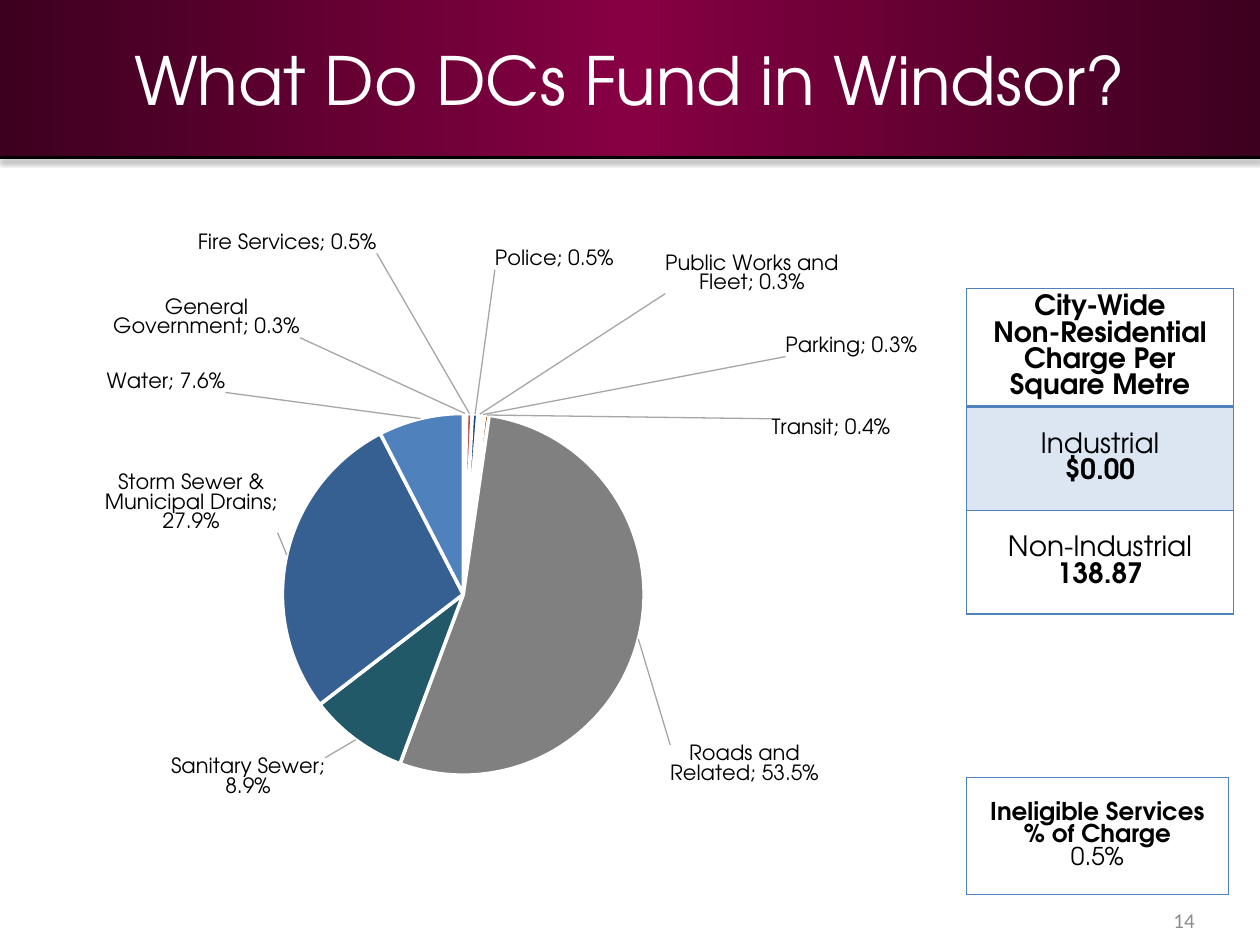
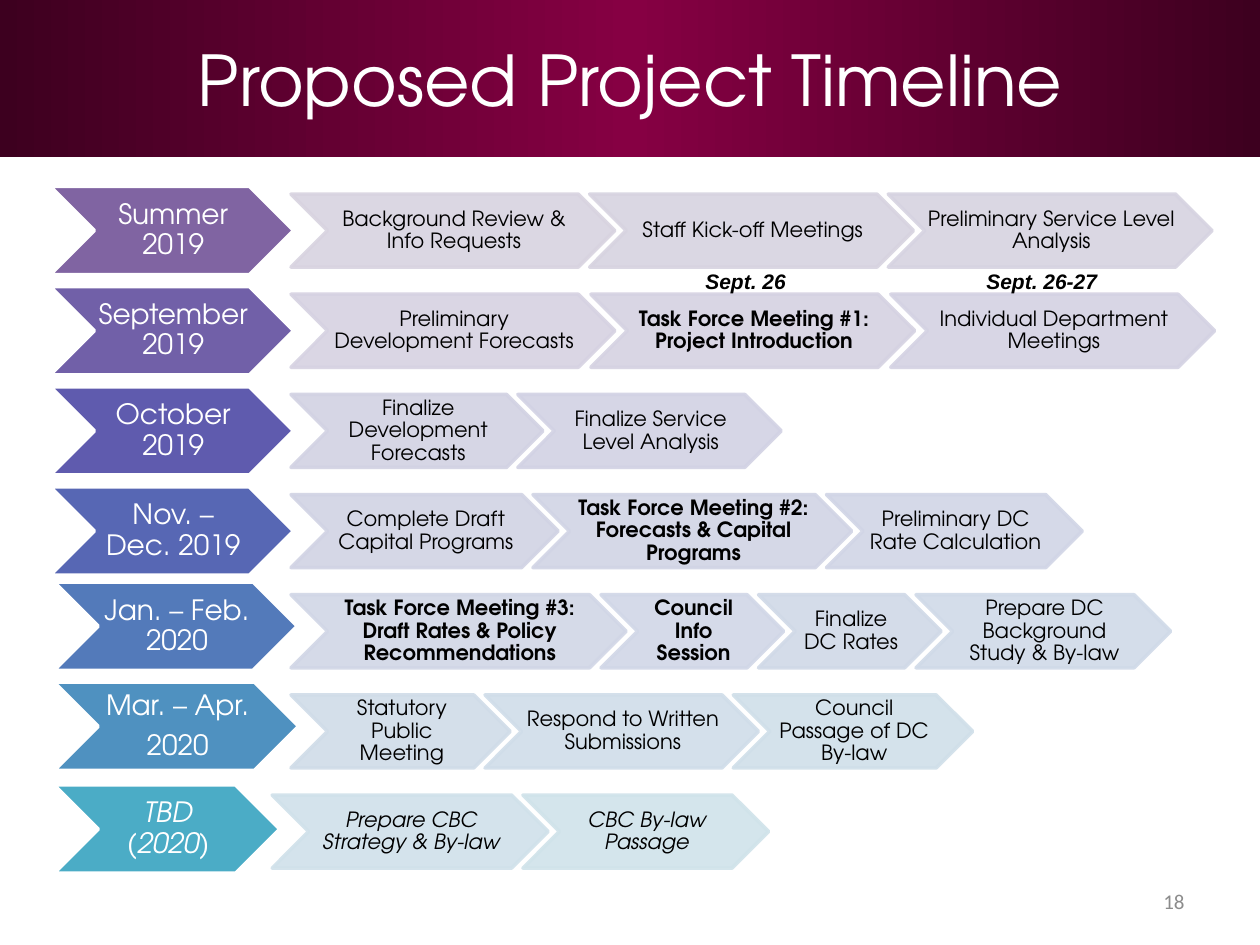
import math

import lxml.etree
import pptx
import pptx.chart.data
import pptx.dml.color
import pptx.enum.chart
import pptx.enum.shapes
import pptx.enum.text
import pptx.oxml
import pptx.oxml.ns
import pptx.util

Inches, Pt = pptx.util.Inches, pptx.util.Pt
qn = pptx.oxml.ns.qn
SHAPE = pptx.enum.shapes.MSO_SHAPE
ALIGN = pptx.enum.text.PP_ALIGN
MIDDLE = pptx.enum.text.MSO_ANCHOR.MIDDLE

# Shared style
FONT = "TeX Gyre Adventor"
BAND_H = 1.25
BAND_EDGE, BAND_MID = "3D001F", "860043"
BLUE, PALE_BLUE, GREY = "4F81BD", "DCE6F2", "8C8C8C"
WHITE, BLACK = "FFFFFF", "000000"
NS = pptx.oxml.ns.nsdecls("a", "c")

# Fund shares: name, share, colour, label centre x, y, label width, height
FUNDS = [
    ("General Government", 0.003, "4BACC6", 1.64, 2.52, 1.48, 0.32),
    ("Fire Services", 0.005, "C0504D", 2.28, 1.93, 1.43, 0.16),
    ("Police", 0.005, "1F497D", 4.4, 2.06, 0.94, 0.16),
    ("Public Works and Fleet", 0.003, "F79646", 5.97, 2.17, 1.38, 0.32),
    ("Parking", 0.003, "772C2A", 6.76, 2.75, 1.05, 0.16),
    ("Transit", 0.004, "984807", 6.6, 3.4, 0.95, 0.16),
    ("Roads and Related", 0.535, "808080", 5.91, 6.08, 1.18, 0.32),
    ("Sanitary Sewer", 0.089, "215968", 1.96, 6.17, 1.22, 0.32),
    ("Storm Sewer & Municipal Drains", 0.279, "376092", 1.52, 3.98, 1.37, 0.47),
    ("Water", 0.076, "4F81BD", 1.33, 3.03, 0.95, 0.16),
]
CHART_BOX = (0.02, 1.43, 7.65, 4.9)
PLOT = (0.178, 0.378, 0.6, 0.586)

# Table rows: height, fill, [(text, bold)]
CHARGES = [
    (0.92, WHITE, [("City-Wide", True), ("Non-Residential Charge Per", True),
                   ("Square Metre", True)]),
    (0.83, PALE_BLUE, [("Industrial", False), ("$0.00", True)]),
    (0.82, WHITE, [("Non-Industrial", False), ("138.87", True)]),
]
INELIGIBLE = [
    (0.93, WHITE, [("Ineligible Services % of Charge", True), ("0.5%", False)]),
]

# Timeline rows: period (lines, left, width, rise above steps, colour),
# steps (left, overlap), [(text, width, colour, bold)]
TIMELINE = [
    ((["Summer 2019"], 0.4, 1.93, 0.06, "8064A2"), (2.31, 0.2), [
        ("Background Review & Info Requests", 2.57, "D8D3E0", False),
        ("Staff Kick-off Meetings", 2.57, "D7D3E0", False),
        ("Preliminary Service Level Analysis", 2.57, "D6D3E1", False)]),
    ((["September 2019"], 0.4, 1.93, 0.06, "7160A8"), (2.31, 0.19), [
        ("Preliminary Development Forecasts", 2.57, "D6D2E2", False),
        ("Task Force Meeting #1: Project Introduction", 2.57, "D5D2E2", True),
        ("Individual Department Meetings", 2.57, "D4D2E3", False)]),
    ((["October 2019"], 0.4, 1.93, 0.06, "5F5BAE"), (2.31, 0.2), [
        ("Finalize Development Forecasts", 2, "D2D2E3", False),
        ("Finalize Service Level Analysis", 2.09, "D2D2E4", False)]),
    ((["Nov. – Dec. 2019"], 0.4, 1.93, 0.06, "5767B4"), (2.31, 0.2), [
        ("Complete Draft Capital Programs", 2.12, "D1D3E4", False),
        ("Task Force Meeting #2: Forecasts & Capital Programs", 2.53, "D1D4E5", True),
        ("Preliminary DC Rate Calculation", 2.03, "D1D5E6", False)]),
    ((["Jan. – Feb. 2020"], 0.43, 1.93, 0.1, "537ABA"), (2.31, 0.2), [
        ("Task Force Meeting #3: Draft Rates & Policy Recommendations",
         2.66, "D1D6E6", True),
        ("Council Info Session", 1.45, "D1D7E7", True),
        ("Finalize DC Rates", 1.45, "D0D9E7", False),
        ("Prepare DC Background Study & By-law", 2.02, "D0DAE8", False)]),
    ((["Mar. – Apr.", "2020"], 0.43, 1.94, 0.1, "4F91C0"), (2.31, 0.2), [
        ("Statutory Public Meeting", 1.74, "D0DCE8", False),
        ("Respond to Written Submissions", 2.17, "D0DDE9", False),
        ("Council Passage of DC By-law", 1.9, "D0DFE9", False)]),
    ((["TBD (2020)"], 0.43, 1.79, 0.08, "4BACC6"), (2.16, 0.2), [
        ("Prepare CBC Strategy & By-law", 2.19, "D0E1EA", False),
        ("CBC By-law Passage", 1.95, "D0E3EA", False)]),
]
FIRST_STEP_TOP, LAST_STEP_TOP = 1.54, 6.31
PERIOD_H, STEP_H = 0.7, 0.58
DATES = [("Sept. 26", 5.5), ("Sept. 26-27", 7.73)]


def rgb(value):
    return pptx.dml.color.RGBColor.from_string(value)


def box(*lengths):
    return [Inches(v) for v in lengths]


def style(p, size, color, name=FONT, bold=False, italic=False, align=ALIGN.CENTER):
    p.alignment = align
    f = p.font
    f.size, f.name, f.bold, f.italic = Pt(size), name, bold, italic
    f.color.rgb = rgb(color)


def add_text(slide, text, bounds, size, color, **kw):
    tf = slide.shapes.add_textbox(*box(*bounds)).text_frame
    tf.word_wrap = True
    p = tf.paragraphs[0]
    p.text = text
    style(p, size, color, **kw)
    return tf


def add_band(layout, slide):
    """Draw the title band and keep it on the layout."""
    sp = slide.shapes.add_shape(SHAPE.RECTANGLE, *box(0, 0, 10, BAND_H))
    sp.shadow.inherit = False
    stops = "".join(f'<a:gs pos="{pos}"><a:srgbClr val="{c}"/></a:gs>' for pos, c in
                    ((0, BAND_EDGE), (50000, BAND_MID), (100000, BAND_EDGE)))
    sp._element.spPr.insert(2, pptx.oxml.parse_xml(
        f'<a:gradFill {NS}><a:gsLst>{stops}</a:gsLst><a:lin ang="0" scaled="0"/></a:gradFill>'))
    sp.line.fill.background()
    layout.shapes._spTree.insert(2, sp._element)


def add_slide_frame(slide, title, size, number, number_at):
    sp = slide.shapes.title
    sp.left, sp.top, sp.width, sp.height = box(0, 0, 10, BAND_H)
    tf = sp.text_frame
    tf.text = title
    tf.auto_size = pptx.enum.text.MSO_AUTO_SIZE.NONE
    tf.vertical_anchor = MIDDLE
    style(tf.paragraphs[0], size, WHITE)
    tf = add_text(slide, number, (*number_at, 2.33, 0.4), 12, GREY,
                  name="Calibri", align=ALIGN.RIGHT)
    tf.vertical_anchor = MIDDLE


def add_band_rule(slide):
    ln = slide.shapes.add_connector(pptx.enum.shapes.MSO_CONNECTOR.STRAIGHT,
                                    *box(0, BAND_H, 10, BAND_H))
    ln.line.color.rgb = rgb(BLACK)
    ln.line.width = Pt(2)
    ln._element.spPr.append(pptx.oxml.parse_xml(
        f'<a:effectLst {NS}><a:outerShdw blurRad="39370" dist="20320" dir="5400000" '
        f'rotWithShape="0"><a:srgbClr val="{BLACK}"><a:alpha val="38000"/></a:srgbClr>'
        '</a:outerShdw></a:effectLst>'))


def set_borders(cell, bottom):
    tc_pr = cell._tc.get_or_add_tcPr()
    widths = (("lnL", 1), ("lnR", 1), ("lnT", 1), ("lnB", bottom))
    for i, (side, width) in enumerate(widths):
        tc_pr.insert(i, pptx.oxml.parse_xml(
            f'<a:{side} {NS} w="{int(Pt(width))}"><a:solidFill><a:srgbClr val="{BLUE}"/>'
            f'</a:solidFill></a:{side}>'))


def add_charge_table(slide, rows, left, top, width, size):
    height = sum(row[0] for row in rows)
    table = slide.shapes.add_table(len(rows), 1, *box(left, top, width, height)).table
    for i, (row_h, fill, lines) in enumerate(rows):
        table.rows[i].height = Inches(row_h)
        cell = table.cell(i, 0)
        cell.vertical_anchor = MIDDLE
        cell.fill.solid()
        cell.fill.fore_color.rgb = rgb(fill)
        set_borders(cell, 2 if i == 0 and len(rows) > 1 else 1)
        cell.text = "\n".join(text for text, _ in lines)
        for p, (_, bold) in zip(cell.text_frame.paragraphs, lines):
            style(p, size, BLACK, bold=bold)
            p.line_spacing = Pt(size - 1)


def label_offsets():
    """Label shifts from the outside-end place, as fractions of the chart."""
    left, top, width, height = CHART_BOX
    x, y, w, h = PLOT
    cx, cy = left + (x + w / 2) * width, top + (y + h / 2) * height
    radius = min(w * width, h * height) / 2 + 0.06
    limit = math.cos(math.radians(85))
    start = 0
    for _, share, _, label_x, label_y, label_w, label_h in FUNDS:
        angle = 2 * math.pi * (start + share / 2)
        start += share
        dx, dy = math.sin(angle), -math.cos(angle)
        side_x = math.copysign(1, dx) if abs(dx) > limit else 0
        side_y = math.copysign(1, dy) if abs(dy) > limit else 0
        yield ((label_x - cx - radius * dx - side_x * label_w / 2) / width,
               (label_y - cy - radius * dy - side_y * label_h / 2) / height)


def labels_xml():
    show = ('<c:dLblPos val="outEnd"/><c:showLegendKey val="0"/><c:showVal val="1"/>'
            '<c:showCatName val="1"/><c:showSerName val="0"/><c:showPercent val="0"/>'
            '<c:showBubbleSize val="0"/><c:separator>; </c:separator>')
    number = '<c:numFmt formatCode="0.0%" sourceLinked="0"/>'
    labels = ""
    for i, (x, y) in enumerate(label_offsets()):
        w, h = (FUNDS[i][5] + 0.08) / CHART_BOX[2], FUNDS[i][6] / CHART_BOX[3]
        labels += (
            f'<c:dLbl><c:idx val="{i}"/><c:layout><c:manualLayout><c:x val="{x:.4f}"/>'
            f'<c:y val="{y:.4f}"/></c:manualLayout></c:layout>{number}{show}'
            '<c:extLst><c:ext uri="{CE6537A1-D6FC-4f65-9D91-7224C49458BB}" '
            'xmlns:c15="http://schemas.microsoft.com/office/drawing/2012/chart">'
            f'<c15:layout><c:manualLayout><c:w val="{w:.4f}"/><c:h val="{h:.4f}"/>'
            '</c:manualLayout></c15:layout></c:ext></c:extLst></c:dLbl>')
    return (f'<c:dLbls {NS}>{labels}{number}{show}<c:showLeaderLines val="1"/>'
            '<c:leaderLines><c:spPr><a:ln w="9525"><a:solidFill><a:srgbClr val="A6A6A6"/>'
            '</a:solidFill></a:ln></c:spPr></c:leaderLines></c:dLbls>')


def add_fund_pie(slide):
    data = pptx.chart.data.CategoryChartData(number_format="0.0%")
    data.categories = [fund[0] for fund in FUNDS]
    data.add_series("Series 1", [fund[1] for fund in FUNDS])
    chart = slide.shapes.add_chart(pptx.enum.chart.XL_CHART_TYPE.PIE,
                                   *box(*CHART_BOX), data).chart
    chart.has_legend = chart.has_title = False
    chart.font.size, chart.font.name = Pt(12), FONT
    chart.font.color.rgb = rgb(BLACK)
    plot = chart.plots[0]
    plot.vary_by_categories = True
    series = plot.series[0]
    for i, fund in enumerate(FUNDS):
        fmt = series.points[i].format
        fmt.fill.solid()
        fmt.fill.fore_color.rgb = rgb(fund[2])
        fmt.line.color.rgb = rgb(WHITE)
        fmt.line.width = Pt(2)
    labels = series.data_labels._element
    labels.getparent().replace(labels, pptx.oxml.parse_xml(labels_xml()))
    # Fixed plot area
    area = chart._chartSpace.find(".//" + qn("c:plotArea"))
    for old in area.findall(qn("c:layout")):
        area.remove(old)
    places = "".join(f'<c:{k} val="{v}"/>' for k, v in zip("xywh", PLOT))
    area.insert(0, pptx.oxml.parse_xml(
        f'<c:layout {NS}><c:manualLayout><c:layoutTarget val="inner"/>'
        f'<c:xMode val="edge"/><c:yMode val="edge"/>{places}</c:manualLayout></c:layout>'))


def add_chevron(slide, lines, bounds, fill, line, size, color, opacity=100, **kw):
    sp = slide.shapes.add_shape(SHAPE.CHEVRON, *box(*bounds))
    sp.shadow.inherit = False
    sp.fill.solid()
    sp.fill.fore_color.rgb = rgb(fill)
    sp.line.color.rgb = rgb(line)
    sp.line.width = Pt(2)
    if opacity < 100:
        for clr in sp._element.spPr.iter(qn("a:srgbClr")):
            lxml.etree.SubElement(clr, qn("a:alpha")).set("val", str(opacity * 1000))
    tf = sp.text_frame
    tf.word_wrap = True
    tf.vertical_anchor = MIDDLE
    tf.margin_left, tf.margin_top, tf.margin_right, tf.margin_bottom = box(0.02, 0.01, 0, 0.01)
    tf.text = "\n".join(lines)
    for p in tf.paragraphs:
        style(p, size, color, **kw)
        p.line_spacing = 0.9
    for p in tf.paragraphs[:-1]:
        p.space_after = Pt(0.35 * size)


def add_timeline(slide):
    pitch = (LAST_STEP_TOP - FIRST_STEP_TOP) / (len(TIMELINE) - 1)
    for i, (period, (left, overlap), steps) in enumerate(TIMELINE):
        top = FIRST_STEP_TOP + i * pitch
        lines, period_left, period_w, rise, color = period
        tentative = i == len(TIMELINE) - 1
        add_chevron(slide, lines, (period_left, top - rise, period_w, PERIOD_H),
                    color, WHITE, 16, WHITE, italic=tentative)
        for text, width, fill, bold in steps:
            add_chevron(slide, [text], (left, top, width, STEP_H), fill, fill,
                        12, BLACK, opacity=90, bold=bold, italic=tentative)
            left += width - overlap


def main():
    prs = pptx.Presentation()
    prs.slide_width, prs.slide_height = box(10, 7.5)
    layout = prs.slide_layouts[5]

    # Fund shares
    slide = prs.slides.add_slide(layout)
    add_band(layout, slide)
    add_slide_frame(slide, "What Do DCs Fund in Windsor?", 38, "14", (7.25, 7.1))
    add_band_rule(slide)
    add_charge_table(slide, CHARGES, 7.67, 2.29, 2.12, 16)
    add_charge_table(slide, INELIGIBLE, 7.67, 6.17, 2.08, 14)
    add_fund_pie(slide)

    # Timeline
    slide = prs.slides.add_slide(layout)
    add_slide_frame(slide, "Proposed Project Timeline", 40, "18", (7.17, 6.95))
    add_timeline(slide)
    for text, left in DATES:
        add_text(slide, text, (left, 2.08, 1.17, 0.3), 12, BLACK, name="Arial",
                 bold=True, italic=True, align=ALIGN.LEFT)

    prs.save("out.pptx")


if __name__ == "__main__":
    main()
